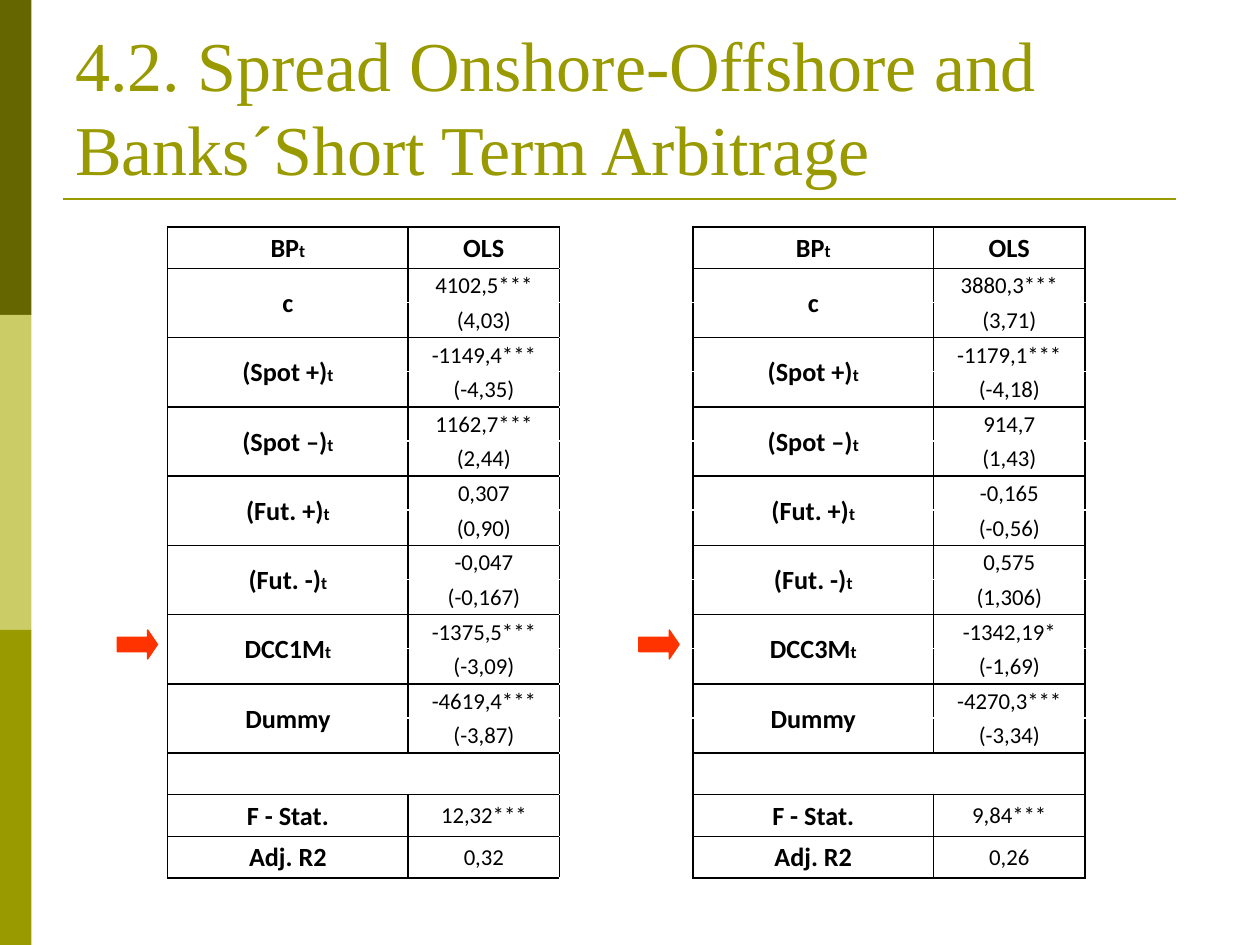
"""Build the slide on onshore-offshore spread and short term arbitrage."""
import dataclasses

import lxml.etree
import pptx
import pptx.dml.color
import pptx.enum.shapes
import pptx.enum.text
import pptx.oxml.ns
import pptx.util

Inches = pptx.util.Inches
Pt = pptx.util.Pt
SHAPES = pptx.enum.shapes.MSO_SHAPE
ANCHOR = pptx.enum.text.MSO_ANCHOR
ALIGN = pptx.enum.text.PP_ALIGN
qn = pptx.oxml.ns.qn

COLORS = {
    "dark": "666600",
    "pale": "CCCC66",
    "olive": "999900",
    "arrow": "FF3300",
    "ink": "000000",
}


@dataclasses.dataclass
class Term:
    name: str
    sub: str
    value: str
    stat: str


@dataclasses.dataclass
class Model:
    col: int
    terms: list[Term]
    fstat: str
    fit: str


def make_model(col: int, lag: str, pairs: list[tuple[str, str]], fstat: str, fit: str) -> Model:
    names = [("c", ""), ("(Spot +)", "t"), ("(Spot –)", "t"), ("(Fut. +)", "t"),
             ("(Fut. -)", "t"), (lag, "t"), ("Dummy", "")]
    terms = [Term(*name, *pair) for name, pair in zip(names, pairs)]
    return Model(col, terms, fstat, fit)


MODELS = [
    make_model(0, "DCC1M", [
        ("4102,5***", "(4,03)"), ("-1149,4***", "(-4,35)"), ("1162,7***", "(2,44)"),
        ("0,307", "(0,90)"), ("-0,047", "(-0,167)"), ("-1375,5***", "(-3,09)"),
        ("-4619,4***", "(-3,87)")], "12,32***", "0,32"),
    make_model(3, "DCC3M", [
        ("3880,3***", "(3,71)"), ("-1179,1***", "(-4,18)"), ("914,7", "(1,43)"),
        ("-0,165", "(-0,56)"), ("0,575", "(1,306)"), ("-1342,19*", "(-1,69)"),
        ("-4270,3***", "(-3,34)")], "9,84***", "0,26"),
]
WIDTHS = [1.91, 1.2, 1.06, 1.91, 1.2]
HEIGHTS = [0.33] + [0.27, 0.28] * 7 + [0.33] * 3
BLANK = 15


def tint(key: str) -> pptx.dml.color.RGBColor:
    return pptx.dml.color.RGBColor.from_string(COLORS[key])


def add_run(para, text: str, size: float, font: str, key: str, bold: bool = False) -> None:
    run = para.add_run()
    run.text = text
    run.font.size = Pt(size)
    run.font.name = font
    run.font.bold = bold
    run.font.color.rgb = tint(key)


def add_block(slide, kind, box: tuple, key: str, edge: float = 0):
    shape = slide.shapes.add_shape(kind, *map(Inches, box))
    shape.shadow.inherit = False
    shape.fill.solid()
    shape.fill.fore_color.rgb = tint(key)
    if edge:
        shape.line.color.rgb = tint(key)
        shape.line.width = Pt(edge)
    else:
        shape.line.fill.background()
    return shape


def add_rule(slide) -> None:
    rule = slide.shapes.add_connector(
        pptx.enum.shapes.MSO_CONNECTOR.STRAIGHT,
        Inches(0.5), Inches(1.58), Inches(9.33), Inches(1.58))
    rule.line.color.rgb = tint("olive")
    rule.line.width = Pt(1.5)
    lxml.etree.SubElement(rule._element.spPr, qn("a:effectLst"))


def add_title(slide, text: str) -> None:
    box = slide.shapes.add_textbox(Inches(0.5), Inches(0.3), Inches(9), Inches(1.25))
    frame = box.text_frame
    frame.word_wrap = True
    frame.vertical_anchor = ANCHOR.BOTTOM
    add_run(frame.paragraphs[0], text, 40, "Times New Roman", "olive")


def style_cell(cell, sides: str) -> None:
    props = cell._tc.get_or_add_tcPr()
    for side in sides:
        line = lxml.etree.SubElement(props, qn(f"a:ln{side}"), w=str(Pt(1)))
        fill = lxml.etree.SubElement(line, qn("a:solidFill"))
        lxml.etree.SubElement(fill, qn("a:srgbClr"), val=COLORS["ink"])
    cell.fill.background()
    cell.vertical_anchor = ANCHOR.MIDDLE
    cell.margin_left = cell.margin_right = cell.margin_top = Inches(0.01)
    cell.margin_bottom = 0


def pick_sides(row: int, col: int) -> str:
    if col == 2:
        return "LR"
    if col in (1, 4) and 0 < row < BLANK:
        return "LRT" if row % 2 else "LRB"
    return "LRTB"


def write_cell(cell, text: str, sub: str = "", size: float = 13, bold: bool = False) -> None:
    para = cell.text_frame.paragraphs[0]
    para.alignment = ALIGN.CENTER
    add_run(para, text, size, "Calibri", "ink", bold)
    if sub:
        add_run(para, sub, 10, "Calibri", "ink", bold)


def write_head(cell, text: str, sub: str = "") -> None:
    write_cell(cell, text, sub, 15, True)


def fill_model(table, model: Model) -> None:
    left, right = model.col, model.col + 1
    write_head(table.cell(0, left), "BP", "t")
    write_head(table.cell(0, right), "OLS")
    for row, term in zip(range(1, BLANK, 2), model.terms):
        table.cell(row, left).merge(table.cell(row + 1, left))
        write_head(table.cell(row, left), term.name, term.sub)
        write_cell(table.cell(row, right), term.value)
        write_cell(table.cell(row + 1, right), term.stat)
    table.cell(BLANK, left).merge(table.cell(BLANK, right))
    tail = [("F - Stat.", model.fstat), ("Adj. R2", model.fit)]
    for row, (name, value) in enumerate(tail, BLANK + 1):
        write_head(table.cell(row, left), name)
        write_cell(table.cell(row, right), value)


def add_grid(slide) -> None:
    frame = slide.shapes.add_table(
        len(HEIGHTS), len(WIDTHS), Inches(1.33), Inches(1.8),
        Inches(sum(WIDTHS)), Inches(sum(HEIGHTS)))
    table = frame.table
    table.first_row = table.horz_banding = False
    for col, width in zip(table.columns, WIDTHS):
        col.width = Inches(width)
    for row, height in zip(table.rows, HEIGHTS):
        row.height = Inches(height)
    for model in MODELS:
        fill_model(table, model)
    for row in range(len(HEIGHTS)):
        for col in range(len(WIDTHS)):
            cell = table.cell(row, col)
            style_cell(cell, pick_sides(row, col))
            if not cell.text_frame.text:
                para = cell.text_frame.paragraphs[0]
                lxml.etree.SubElement(para._p, qn("a:endParaRPr"), sz="1000")


def main() -> None:
    deck = pptx.Presentation()
    deck.slide_width, deck.slide_height = Inches(10), Inches(7.5)
    slide = deck.slides.add_slide(deck.slide_layouts[6])
    for rank, key in enumerate(("dark", "pale", "olive")):
        add_block(slide, SHAPES.RECTANGLE, (0, 2.5 * rank, 0.25, 2.5), key)
    add_rule(slide)
    add_title(slide, "4.2. Spread Onshore-Offshore and Banks´Short Term Arbitrage")
    add_grid(slide)
    for left in (0.93, 5.07):
        arrow = add_block(slide, SHAPES.RIGHT_ARROW, (left, 5, 0.32, 0.23), "arrow", 0.75)
        arrow.adjustments[0] = 0.5
        arrow.adjustments[1] = 0.34
    deck.save("out.pptx")


if __name__ == "__main__":
    main()
